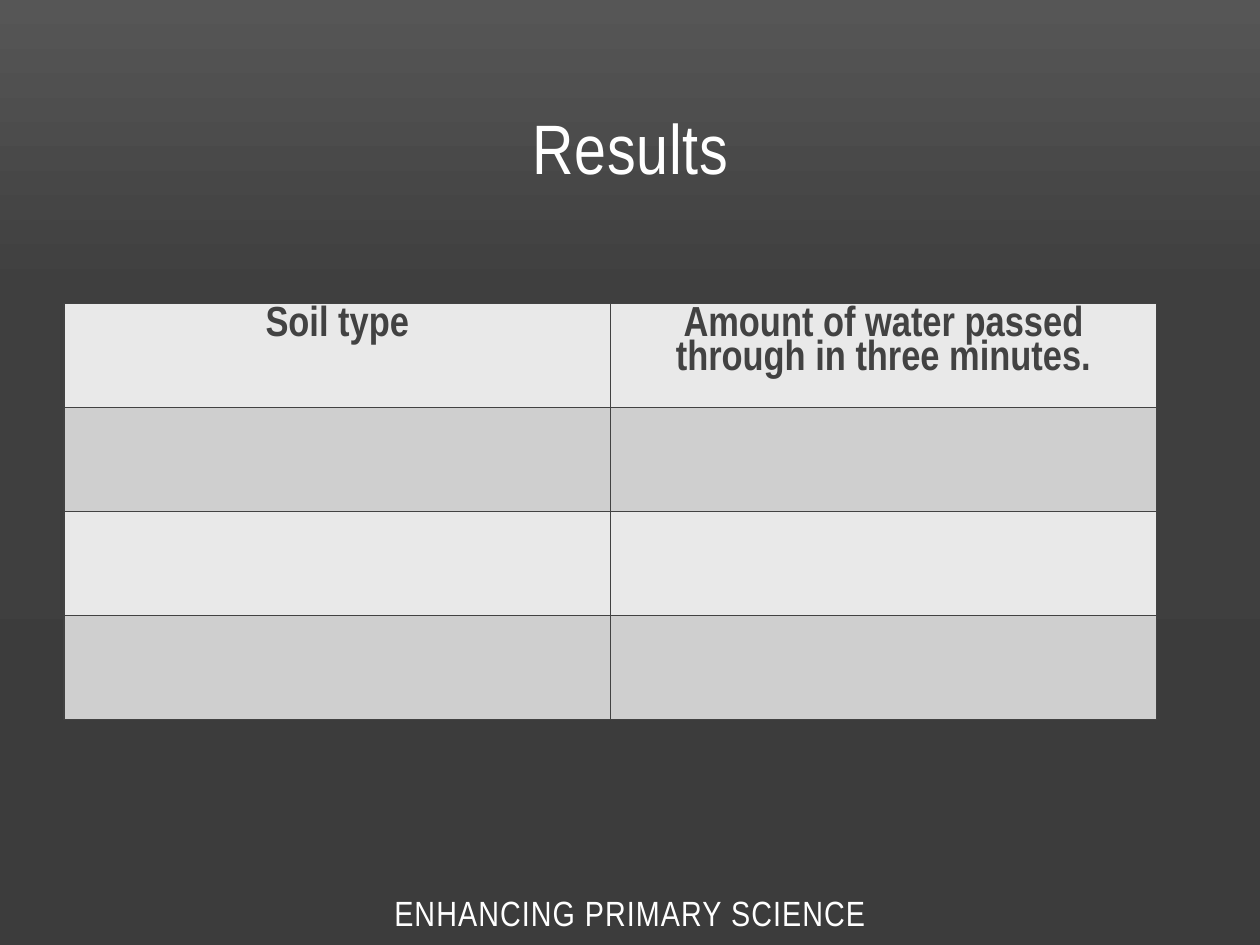
from lxml import etree
from pptx import Presentation
from pptx.dml.color import RGBColor
from pptx.enum.text import MSO_ANCHOR, PP_ALIGN
from pptx.oxml.ns import qn
from pptx.util import Inches, Pt

CENTER = PP_ALIGN.CENTER
MIDDLE = MSO_ANCHOR.MIDDLE
BOTTOM = MSO_ANCHOR.BOTTOM
HUES = {"top": "565656", "mid": "3F3F3F", "base": "3C3C3C", "text": "FFFFFF",
        "ink": "424242", "light": "E9E9E9", "dark": "CFCFCF"}
FONT = "Arial Narrow"
STYLES = {
    "title": {"size": Pt(40), "bold": False, "name": FONT},
    "footer": {"size": Pt(20), "bold": False, "name": FONT},
    "head": {"size": Pt(24), "bold": True, "name": FONT},
}
ROWS = [["Soil type", "Amount of water passed through in three minutes."],
        ["", ""], ["", ""], ["", ""]]


def add_hue(parent, hue):
    etree.SubElement(parent, qn("a:srgbClr"), val=HUES[hue])


class Deck:
    def __init__(self):
        self.file = Presentation()
        self.file.slide_width = Inches(10)
        self.file.slide_height = Inches(7.5)
        self.slide = self.file.slides.add_slide(self.file.slide_layouts[5])

    def backdrop(self, stops):
        fill = self.slide.background.fill
        fill.gradient()
        fill.gradient_angle = 270
        items = next(self.slide.element.iter(qn("a:gsLst")))
        for old in list(items):
            items.remove(old)
        for place, hue in stops:
            stop = etree.SubElement(items, qn("a:gs"), pos=str(place * 1000))
            add_hue(stop, hue)

    def label(self, frame, text, style, hue, space=0):
        para = frame.paragraphs[0]
        para.alignment = CENTER
        run = para.add_run()
        run.text = text
        for key, value in STYLES[style].items():
            setattr(run.font, key, value)
        run.font.color.rgb = RGBColor.from_string(HUES[hue])
        if space:
            run._r.get_or_add_rPr().set("spc", str(space))
        return para

    def title(self, text, box):
        shape = self.slide.shapes.title
        shape.left, shape.top, shape.width, shape.height = map(Inches, box)
        shape.text_frame.vertical_anchor = BOTTOM
        self.label(shape.text_frame, text, "title", "text", 50)

    def footer(self, text, box):
        frame = self.slide.shapes.add_textbox(*map(Inches, box)).text_frame
        frame.word_wrap = True
        frame.vertical_anchor = MIDDLE
        self.label(frame, text, "footer", "text", 60)

    def edge(self, cell):
        props = cell._tc.get_or_add_tcPr()
        for side in ("lnL", "lnR", "lnT", "lnB"):
            line = etree.SubElement(props, qn("a:" + side), w=str(Pt(1)))
            add_hue(etree.SubElement(line, qn("a:solidFill")), "ink")

    def table(self, rows, box):
        grid = self.slide.shapes.add_table(
            len(rows), len(rows[0]), *map(Inches, box)).table
        for i, row in enumerate(rows):
            for j, text in enumerate(row):
                cell = grid.cell(i, j)
                self.edge(cell)
                cell.fill.solid()
                hue = "dark" if i % 2 else "light"
                cell.fill.fore_color.rgb = RGBColor.from_string(HUES[hue])
                if text:
                    para = self.label(cell.text_frame, text, "head", "ink")
                    para.line_spacing = 0.85


def main():
    deck = Deck()
    deck.backdrop([(0, "top"), (31, "mid"), (100, "base")])
    deck.title("Results", (0.67, 0.3, 8.67, 1.25))
    deck.footer("ENHANCING PRIMARY SCIENCE", (0, 6.98, 10, 0.52))
    deck.table(ROWS, (0.51, 2.41, 8.67, 3.3))
    deck.file.save("out.pptx")


if __name__ == "__main__":
    main()
